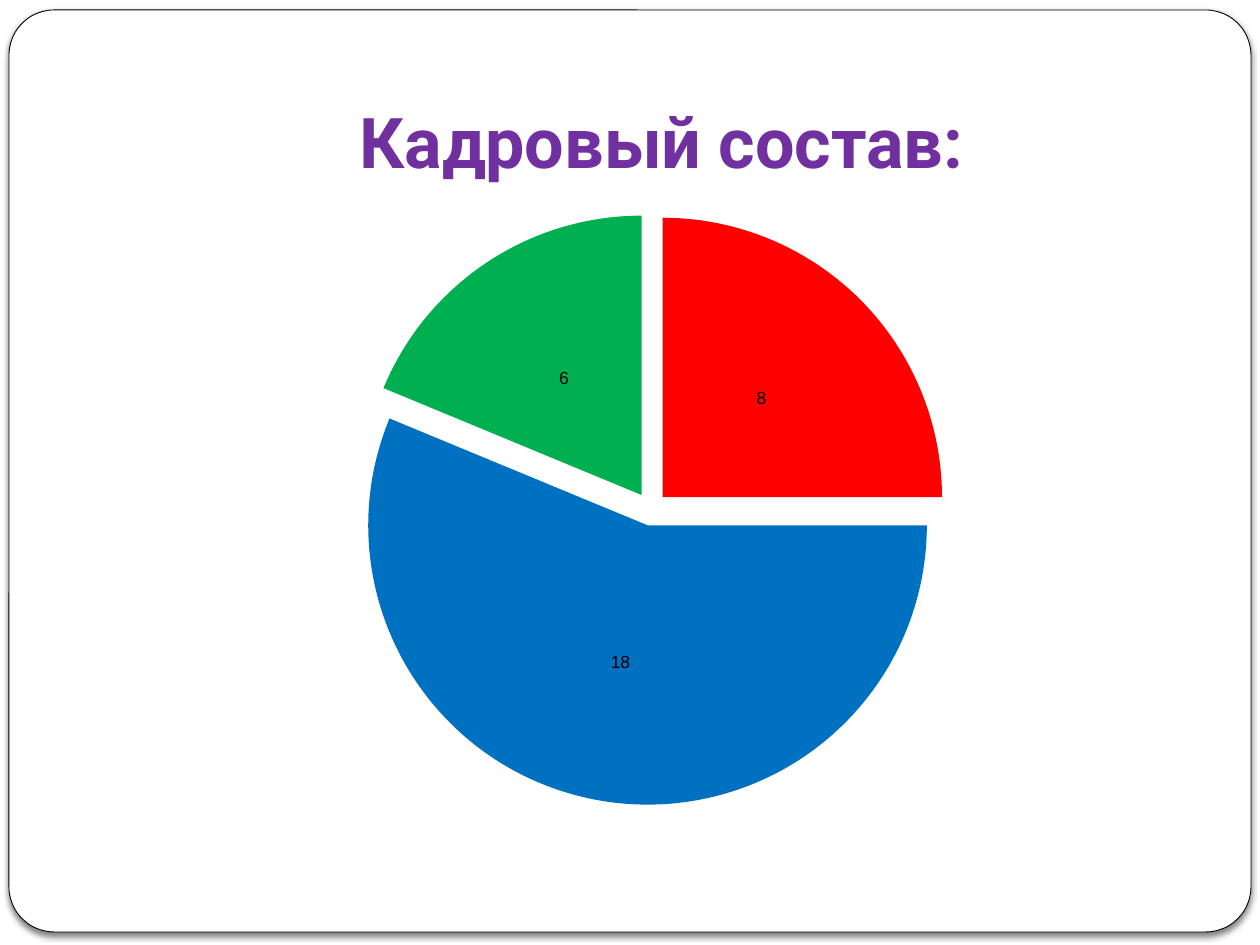
"""Build a staff slide with a title and an exploded pie chart."""
from lxml import etree
from pptx import Presentation
from pptx.chart.data import CategoryChartData
from pptx.dml.color import RGBColor
from pptx.enum.chart import XL_CHART_TYPE, XL_LABEL_POSITION
from pptx.enum.shapes import MSO_SHAPE
from pptx.enum.text import MSO_ANCHOR, PP_ALIGN
from pptx.oxml import parse_xml
from pptx.oxml.ns import nsdecls, qn
from pptx.util import Pt

PIE = XL_CHART_TYPE.PIE
MID = XL_LABEL_POSITION.CENTER
ROUND = MSO_SHAPE.ROUNDED_RECTANGLE
LOW = MSO_ANCHOR.BOTTOM
CENTER = PP_ALIGN.CENTER
WHITE = RGBColor(0xFF, 0xFF, 0xFF)
BLACK = RGBColor(0x00, 0x00, 0x00)
PURPLE = RGBColor(0x70, 0x30, 0xA0)
RED = RGBColor(0xFF, 0x00, 0x00)
BLUE = RGBColor(0x00, 0x70, 0xC0)
GREEN = RGBColor(0x00, 0xB0, 0x50)
SCALE = 914400 // 126


def px(*sizes):
    return [size * SCALE for size in sizes]


deck = Presentation()
deck.slide_width, deck.slide_height = px(1260, 945)
slide = deck.slides.add_slide(deck.slide_layouts[6])

frame = slide.shapes.add_shape(ROUND, *px(9, 10, 1242, 922))
frame.adjustments[0] = 0.049
frame.fill.solid()
frame.fill.fore_color.rgb = WHITE
frame.line.color.rgb = BLACK
frame.line.width = Pt(0.5)
frame.shadow.inherit = False
glow = frame.element.spPr.find(qn("a:effectLst"))
glow.append(parse_xml(
    f'<a:outerShdw {nsdecls("a")} blurRad="{Pt(3)}" dist="{Pt(2)}" '
    'dir="5400000" algn="tl" rotWithShape="0"><a:srgbClr val="000000">'
    '<a:alpha val="50000"/></a:srgbClr></a:outerShdw>'))

title = slide.shapes.add_textbox(*px(126, 38, 1071, 157)).text_frame
title.word_wrap = True
title.vertical_anchor = LOW
title.margin_bottom = Pt(7.2)
title.text = "Кадровый состав:"
line = title.paragraphs[0]
line.alignment = CENTER
font = line.runs[0].font
font.name = "Roboto"
font.size = Pt(40)
font.bold = True
font.color.rgb = PURPLE

data = CategoryChartData()
data.categories = ["1", "2", "3"]
data.add_series("Series 1", [8, 18, 6])
chart = slide.shapes.add_chart(PIE, *px(95, 194, 1123, 630), data).chart
chart.has_legend = False
chart.has_title = False
chart.font.name = "Arial"
chart.font.size = Pt(10)
chart.font.color.rgb = BLACK

plot = chart.plots[0]
plot.vary_by_categories = False
plot.has_data_labels = True
labels = plot.data_labels
labels.show_value = True
labels.show_percentage = False
labels.position = MID

staff = plot.series[0]
for index, color in enumerate([RED, BLUE, GREEN]):
    fill = staff.points[index].format.fill
    fill.solid()
    fill.fore_color.rgb = color
burst = etree.Element(qn("c:explosion"), val="6")
staff._element.find(qn("c:dPt")).addprevious(burst)

area = chart._chartSpace.chart.plotArea
old = area.find(qn("c:layout"))
if old is not None:
    area.remove(old)
area.insert(0, parse_xml(
    f'<c:layout {nsdecls("c")}><c:manualLayout>'
    '<c:layoutTarget val="inner"/><c:xMode val="edge"/><c:yMode val="edge"/>'
    '<c:x val="0.23"/><c:y val="0.03"/><c:w val="0.53"/><c:h val="0.94"/>'
    '</c:manualLayout></c:layout>'))

deck.save("out.pptx")
